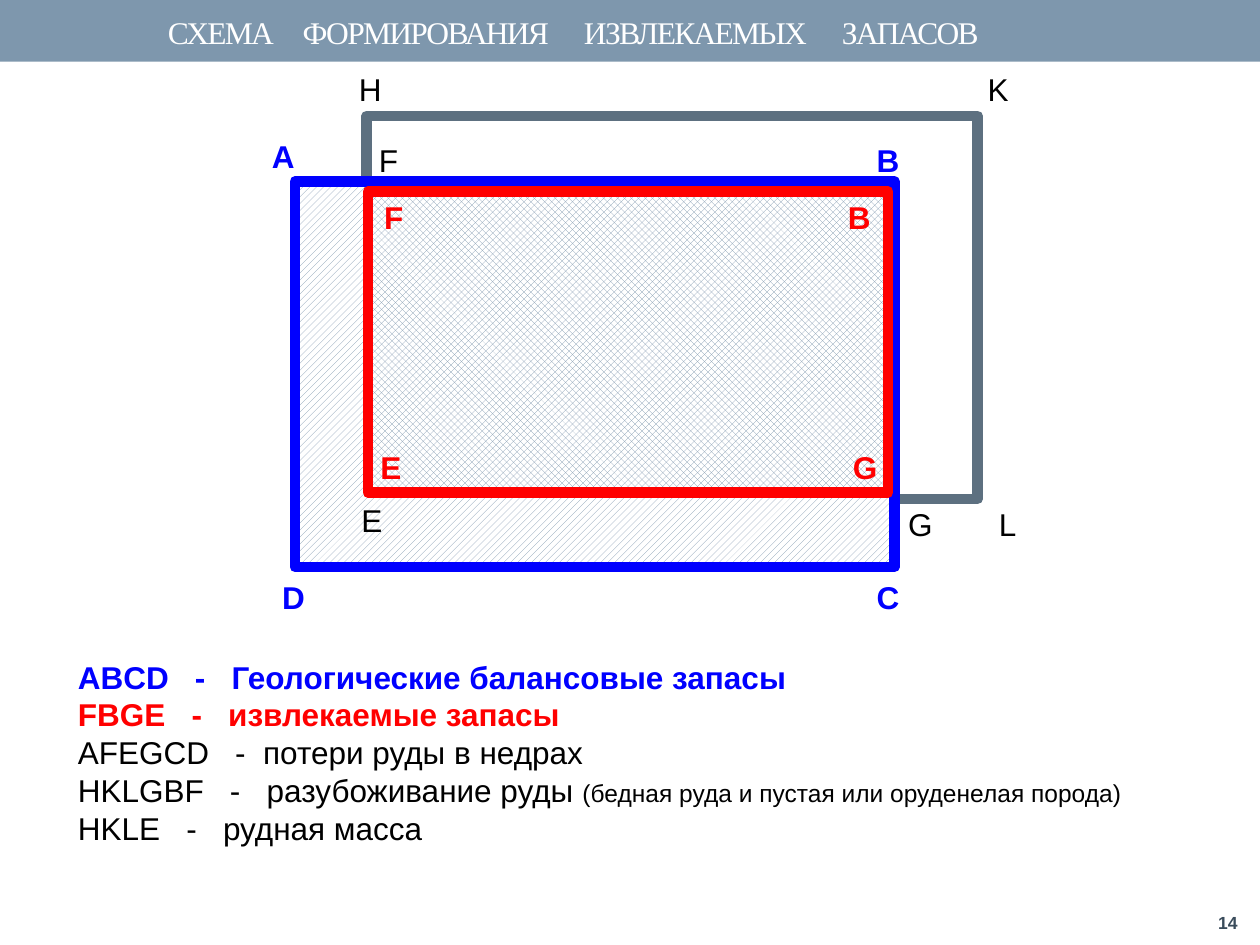
from pptx import Presentation
from pptx.dml.color import RGBColor
from pptx.enum.dml import MSO_PATTERN
from pptx.enum.shapes import MSO_SHAPE
from pptx.enum.text import MSO_ANCHOR, PP_ALIGN
from pptx.util import Inches, Pt

RECTANGLE = MSO_SHAPE.RECTANGLE
HATCH = MSO_PATTERN.WIDE_UPWARD_DIAGONAL
DIAMONDS = MSO_PATTERN.OUTLINED_DIAMOND
TOP, MIDDLE = MSO_ANCHOR.TOP, MSO_ANCHOR.MIDDLE
LEFT, CENTER = PP_ALIGN.LEFT, PP_ALIGN.CENTER

BLUE = RGBColor(0x00, 0x00, 0xFF)
RED = RGBColor(0xFF, 0x00, 0x00)
BLACK = RGBColor(0x00, 0x00, 0x00)
WHITE = RGBColor(0xFF, 0xFF, 0xFF)
STEEL = RGBColor(0x7E, 0x97, 0xAD)
SLATE = RGBColor(0x5D, 0x70, 0x80)
NAVY = RGBColor(0x3A, 0x4C, 0x5B)

# Rectangles of the scheme: left, top, width, height, line colour, pattern
ORE_BLOCKS = [
    (2.91, 0.92, 4.85, 3.04, SLATE, None),
    (2.34, 1.44, 4.76, 3.06, BLUE, HATCH),
    (2.92, 1.52, 4.13, 2.39, RED, DIAMONDS),
]

# Corner letters by colour: letter, left, top, width
CORNERS = {
    BLUE: [("А", 2.06, 1.04, 0.38), ("B", 6.86, 1.07, 0.38),
           ("C", 6.86, 4.54, 0.38), ("D", 2.14, 4.54, 0.38)],
    RED: [("F", 2.95, 1.52, 0.37), ("B", 6.63, 1.52, 0.38),
          ("E", 2.92, 3.51, 0.37), ("G", 6.67, 3.51, 0.4)],
    BLACK: [("H", 2.75, 0.51, 0.38), ("K", 7.74, 0.51, 0.37),
            ("L", 7.83, 3.96, 0.34), ("F", 2.91, 1.07, 0.36),
            ("G", 7.11, 3.96, 0.4), ("E", 2.77, 3.93, 0.37)],
}

# Legend lines: colour, then (text, size) spans
LEGEND = [
    (BLUE, [("ABCD   -   Геологические балансовые запасы", 18)]),
    (RED, [("FBGE   -   извлекаемые запасы", 18)]),
    (BLACK, [("AFEGCD   -  потери руды в недрах", 18)]),
    (BLACK, [("HKLGBF   -   разубоживание руды ", 18),
             ("(бедная руда и пустая или оруденелая порода)", 14)]),
    (BLACK, [("HKLE   -   рудная масса", 18)]),
]


def add_span(para, text, size=18, color=BLACK, bold=False, font="Arial", spacing=None):
    span = para.add_run()
    span.text = text
    span.font.name = font
    span.font.size = Pt(size)
    span.font.bold = bold
    span.font.color.rgb = color
    if spacing is not None:
        span.font._element.set("spc", str(spacing))


def add_text_box(page, left, top, width, height, wrap=False, anchor=TOP):
    box = page.shapes.add_textbox(Inches(left), Inches(top), Inches(width), Inches(height))
    frame = box.text_frame
    frame.word_wrap = wrap
    frame.vertical_anchor = anchor
    return frame


def add_text(page, text, left, top, width, height, wrap=False, anchor=TOP,
             align=LEFT, **style):
    para = add_text_box(page, left, top, width, height, wrap, anchor).paragraphs[0]
    para.alignment = align
    add_span(para, text, **style)


def add_rectangle(page, left, top, width, height, line=None, fill=None, pattern=None):
    shape = page.shapes.add_shape(
        RECTANGLE, Inches(left), Inches(top), Inches(width), Inches(height))
    shape.shadow.inherit = False
    if pattern is not None:
        shape.fill.patterned()
        shape.fill.pattern = pattern
        shape.fill.fore_color.rgb = STEEL
        shape.fill.back_color.rgb = WHITE
    elif fill is not None:
        shape.fill.solid()
        shape.fill.fore_color.rgb = fill
    else:
        shape.fill.background()
    if line is None:
        shape.line.fill.background()
    else:
        shape.line.color.rgb = line
        shape.line.width = Pt(6)


def add_header(page, left, top, width, height):
    add_rectangle(page, left, top, width, height, fill=STEEL)
    add_text(page, "СХЕМА     ФОРМИРОВАНИЯ      ИЗВЛЕКАЕМЫХ      ЗАПАСОВ",
             left + 0.05, top, width - 1, height + 0.02, wrap=True, anchor=MIDDLE,
             align=CENTER, color=WHITE, font="Times New Roman", spacing=-100)


def add_scheme(page):
    for left, top, width, height, line, pattern in ORE_BLOCKS:
        add_rectangle(page, left, top, width, height, line=line, pattern=pattern)
    for color, letters in CORNERS.items():
        for letter, left, top, width in letters:
            add_text(page, letter, left, top, width, 0.4,
                     color=color, bold=color != BLACK)


def add_legend(page, left, top, width, height):
    frame = add_text_box(page, left, top, width, height)
    for index, (color, spans) in enumerate(LEGEND):
        para = frame.add_paragraph() if index else frame.paragraphs[0]
        for text, size in spans:
            add_span(para, text, size=size, color=color, bold=color != BLACK)


def main():
    deck = Presentation()
    deck.slide_width, deck.slide_height = Inches(10), Inches(7.5)
    page = deck.slides.add_slide(deck.slide_layouts[6])
    add_header(page, 0, 0, 10, 0.49)
    add_scheme(page)
    add_legend(page, 0.52, 5.17, 8.54, 1.92)
    # Page number
    add_text(page, "14", 9.57, 7.14, 0.42, 0.36, wrap=True, anchor=MIDDLE,
             size=10, color=NAVY, bold=True)
    deck.save("out.pptx")


if __name__ == "__main__":
    main()
